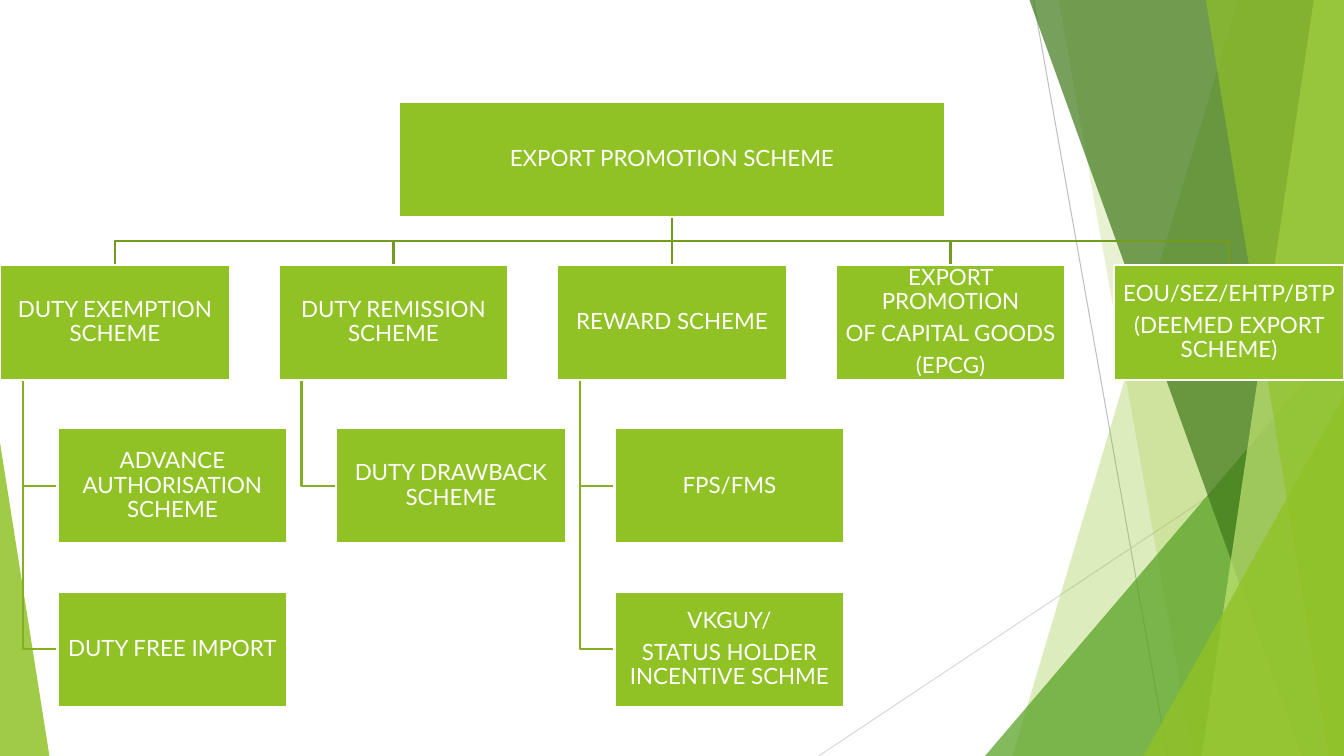
from lxml import etree
from pptx import Presentation
from pptx.dml.color import RGBColor
from pptx.enum.shapes import MSO_CONNECTOR as Connector, MSO_SHAPE as Preset
from pptx.enum.text import MSO_ANCHOR as Anchor, PP_ALIGN as Align
from pptx.oxml.ns import qn
from pptx.util import Inches, Pt

WIDTH, HEIGHT = 13.33, 7.5
COLOURS = {
    "lime": "90C226", "green": "54A021", "forest": "3F7819", "pale": "C0E474",
    "branch": "739B1E", "twig": "83B022", "white": "FFFFFF",
    "grey": "BFBFBF", "light grey": "D9D9D9",
}

BOX_WIDTH, BOX_HEIGHT = 2.28, 1.14
ROOT_WIDTH = 5.41
COLUMN_STEP = (WIDTH - BOX_WIDTH) / 4
ROW_TOPS = [1.01 + 1.62 * row for row in range(4)]
CHILD_INDENT = BOX_WIDTH / 4
TRUNK_INDENT = BOX_WIDTH / 10

ROOT = ["EXPORT PROMOTION SCHEME"]
SCHEMES = [
    (["DUTY EXEMPTION SCHEME"], [["ADVANCE AUTHORISATION SCHEME"], ["DUTY FREE IMPORT"]]),
    (["DUTY REMISSION SCHEME"], [["DUTY DRAWBACK SCHEME"]]),
    (["REWARD SCHEME"], [["FPS/FMS"], ["VKGUY/", "STATUS HOLDER INCENTIVE SCHME"]]),
    (["EXPORT PROMOTION", "OF CAPITAL GOODS", "(EPCG)"], []),
    (["EOU/SEZ/EHTP/BTP", "(DEEMED EXPORT SCHEME)"], []),
]

presentation = Presentation()
presentation.slide_width = Inches(WIDTH)
presentation.slide_height = Inches(HEIGHT)
slide = presentation.slides.add_slide(presentation.slide_layouts[6])
shapes = slide.shapes


def draw_line(points, colour, weight):
    inches = [(Inches(x), Inches(y)) for x, y in points]
    if len(points) == 2:
        line = shapes.add_connector(Connector.STRAIGHT, *inches[0], *inches[1])
        etree.SubElement(line._element.spPr, qn("a:effectLst"))
    else:
        builder = shapes.build_freeform(*inches[0])
        builder.add_line_segments(inches[1:], close=False)
        line = builder.convert_to_shape()
        line.shadow.inherit = False
        line.fill.background()
    line.line.color.rgb = RGBColor.from_string(COLOURS[colour])
    line.line.width = Pt(weight)


def draw_box(left, top, width, lines):
    box = shapes.add_shape(Preset.RECTANGLE, Inches(left), Inches(top), Inches(width), Inches(BOX_HEIGHT))
    box.shadow.inherit = False
    box.fill.solid()
    box.fill.fore_color.rgb = RGBColor.from_string(COLOURS["lime"])
    box.line.color.rgb = RGBColor.from_string(COLOURS["white"])
    box.line.width = Pt(1.5)
    frame = box.text_frame
    frame.word_wrap = True
    frame.vertical_anchor = Anchor.MIDDLE
    frame.margin_left = frame.margin_right = frame.margin_top = frame.margin_bottom = Inches(0.01)
    for index, text in enumerate(lines):
        paragraph = frame.add_paragraph() if index else frame.paragraphs[0]
        paragraph.alignment = Align.CENTER
        paragraph.line_spacing = 0.9
        paragraph.space_after = Pt(5.6)
        run = paragraph.add_run()
        run.text = text
        run.font.name = "Lato"
        run.font.size = Pt(16)
        run.font.color.rgb = RGBColor.from_string(COLOURS["white"])


draw_line([(10.25, 0), (11.58, HEIGHT)], "grey", 0.75)
draw_line([(WIDTH, 4.03), (8.12, HEIGHT)], "light grey", 0.75)

FACETS = [
    ("band", 12.28, 10.04, "lime", 30),
    ("band", 10.5, 11.83, "lime", 20),
    ("triangle", (9.77, 3.33, 3.56), 1, "green", 72),
    ("band", 10.21, 12.91, "forest", 70),
    ("band", 13.03, 11.92, "pale", 70),
    ("band", 11.96, 13.18, "lime", 65),
    ("triangle", (11.34, 3.93, 1.99), 1, "lime", 80),
    ("triangle", (0, 4.39, 0.49), 0, "lime", 85),
]
for kind, start, end, colour, opacity in FACETS:
    if kind == "band":
        builder = shapes.build_freeform(Inches(start), 0)
        builder.add_line_segments([
            (Inches(WIDTH), 0), (Inches(WIDTH), Inches(HEIGHT)), (Inches(end), Inches(HEIGHT)),
        ])
        facet = builder.convert_to_shape()
    else:
        left, top, width = start
        facet = shapes.add_shape(
            Preset.ISOSCELES_TRIANGLE, Inches(left), Inches(top), Inches(width), Inches(HEIGHT - top))
        facet.adjustments[0] = end
    facet.shadow.inherit = False
    facet.line.fill.background()
    facet.fill.solid()
    facet.fill.fore_color.rgb = RGBColor.from_string(COLOURS[colour])
    tint = facet._element.spPr.find(qn("a:solidFill"))[0]
    etree.SubElement(tint, qn("a:alpha"), val=str(opacity * 1000))

center = WIDTH / 2
root_bottom = ROW_TOPS[0] + BOX_HEIGHT
branch_y = (root_bottom + ROW_TOPS[1]) / 2
for column, (scheme, children) in enumerate(SCHEMES):
    left = column * COLUMN_STEP
    middle = left + BOX_WIDTH / 2
    bends = [] if column == 2 else [(center, branch_y), (middle, branch_y)]
    draw_line([(center, root_bottom), *bends, (middle, ROW_TOPS[1])], "branch", 1.5)
    trunk = left + TRUNK_INDENT
    for child_top in ROW_TOPS[2:2 + len(children)]:
        child_middle = child_top + BOX_HEIGHT / 2
        draw_line([
            (trunk, ROW_TOPS[1] + BOX_HEIGHT), (trunk, child_middle), (left + CHILD_INDENT, child_middle),
        ], "twig", 1.5)

draw_box(center - ROOT_WIDTH / 2, ROW_TOPS[0], ROOT_WIDTH, ROOT)
for column, (scheme, children) in enumerate(SCHEMES):
    left = column * COLUMN_STEP
    draw_box(left, ROW_TOPS[1], BOX_WIDTH, scheme)
    for child, child_top in zip(children, ROW_TOPS[2:]):
        draw_box(left + CHILD_INDENT, child_top, BOX_WIDTH, child)

presentation.save("out.pptx")
